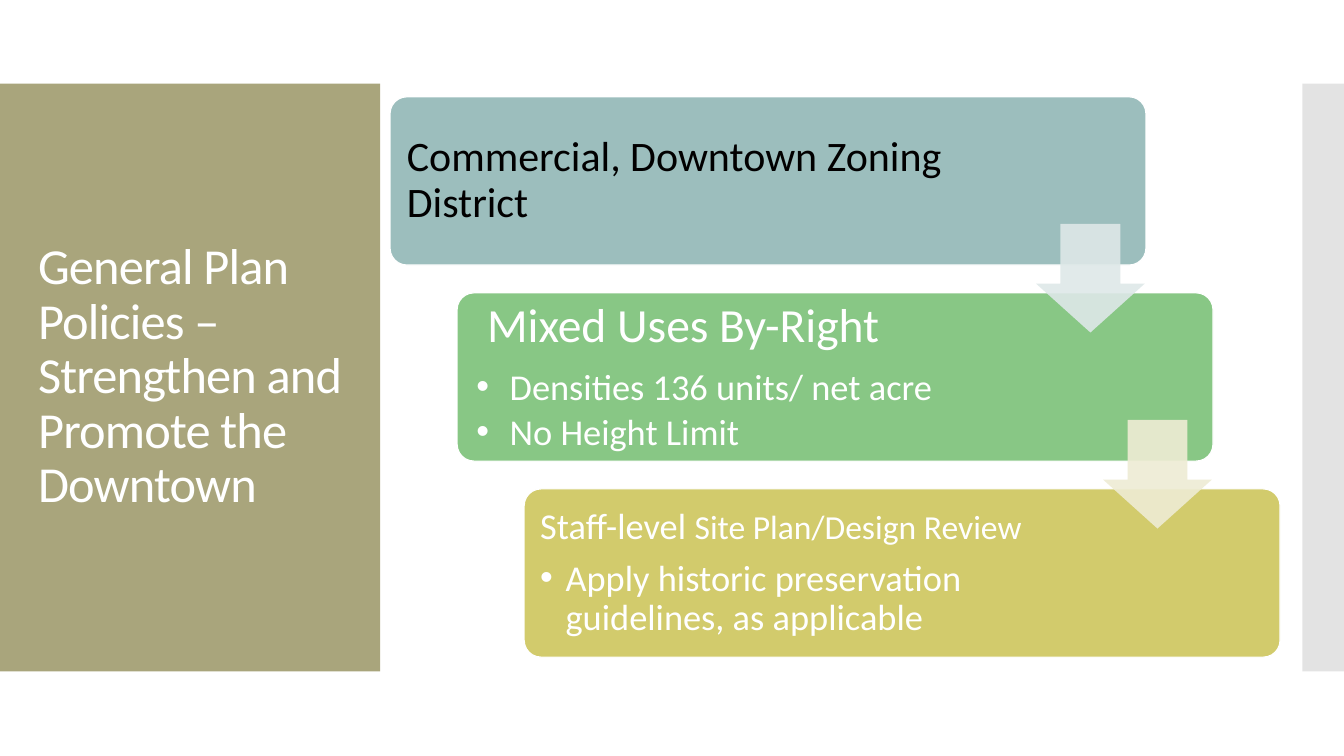
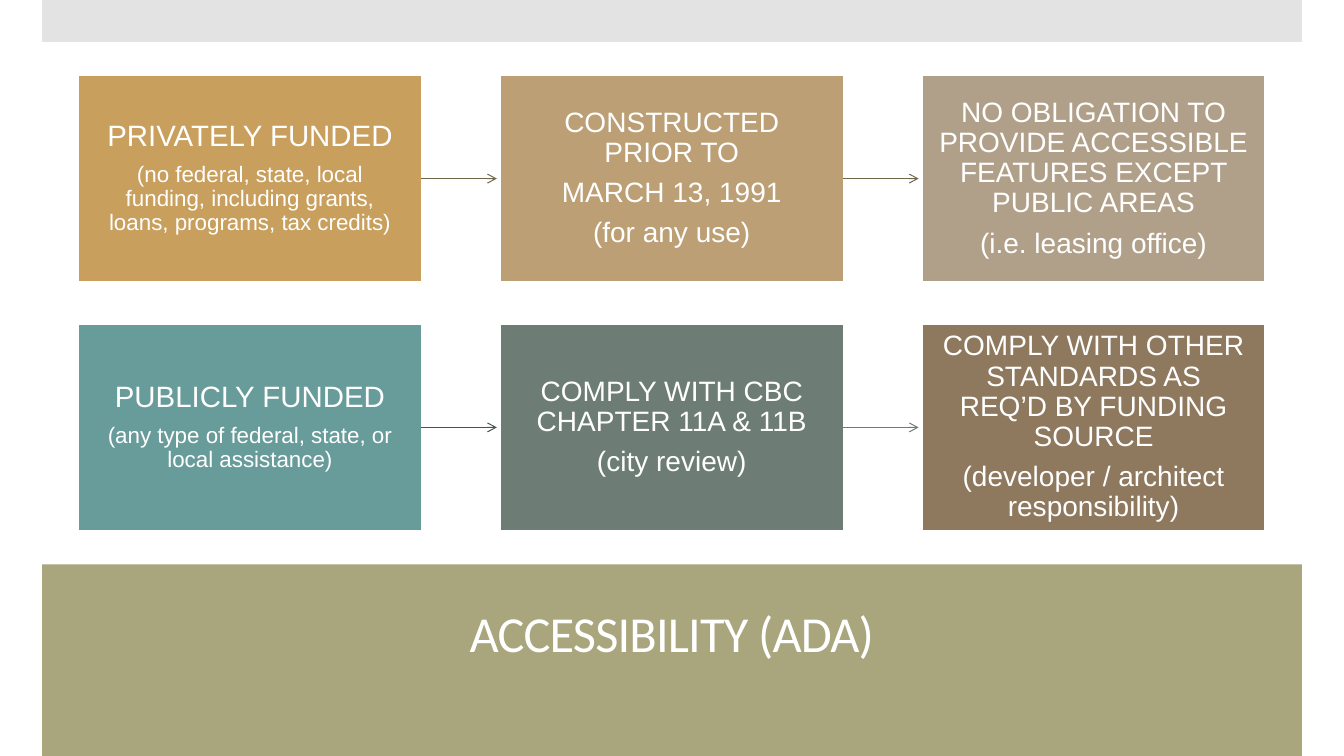
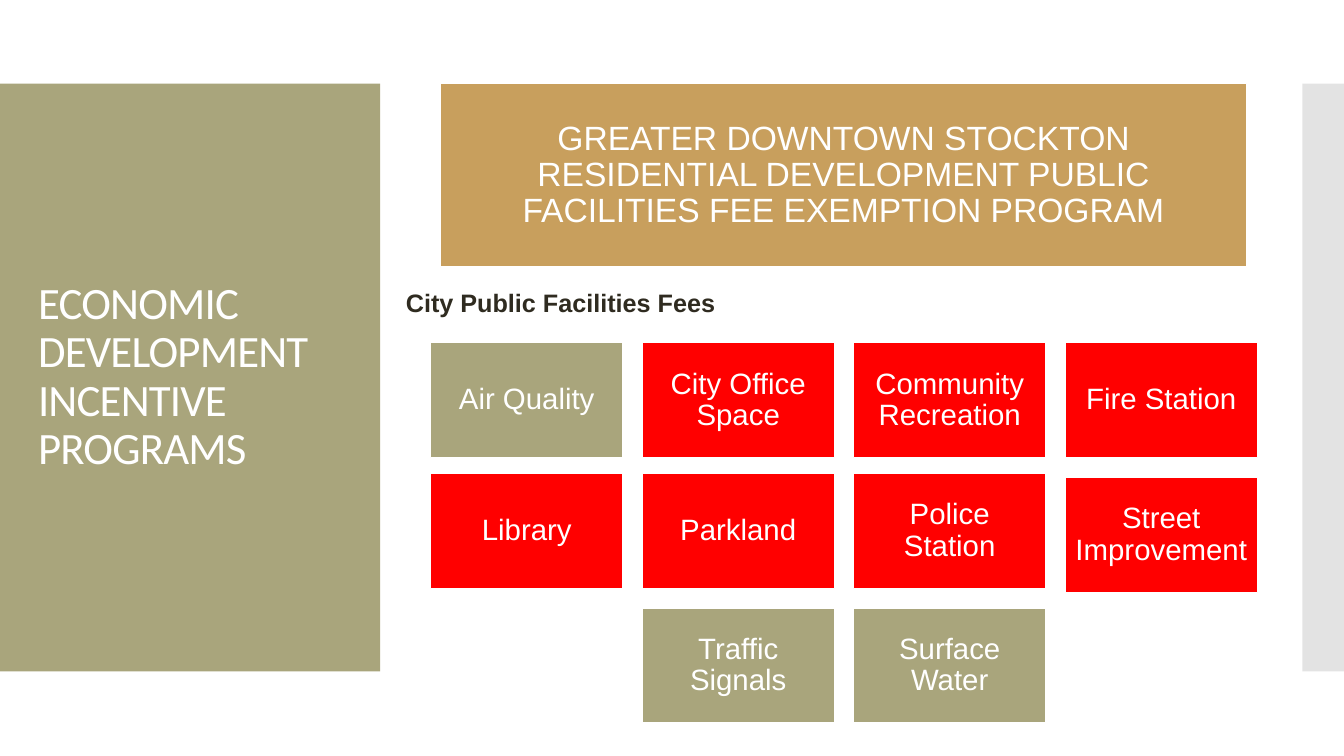
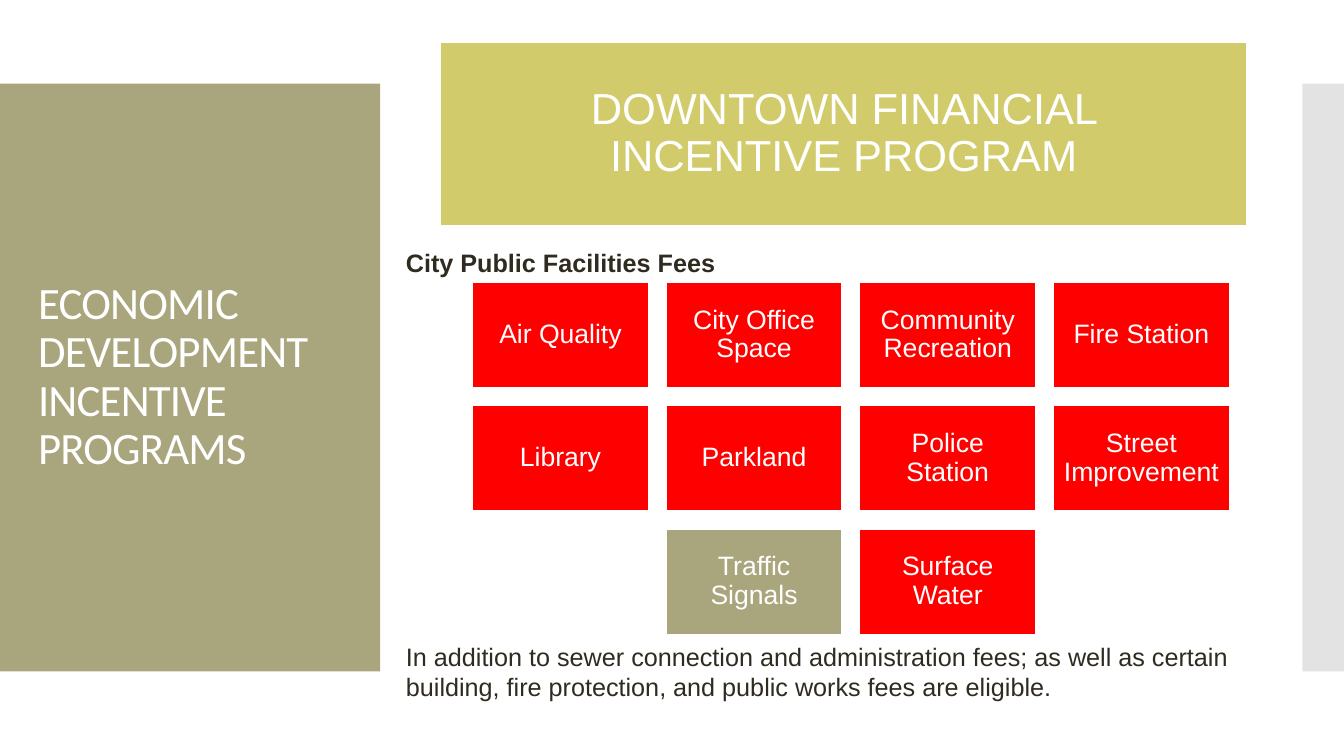
from collections import namedtuple

from lxml import etree
from pptx import Presentation
from pptx.dml.color import RGBColor
from pptx.enum.shapes import MSO_CONNECTOR, MSO_SHAPE
from pptx.enum.text import MSO_ANCHOR, PP_ALIGN
from pptx.oxml.ns import qn
from pptx.util import Cm, Pt

RECT, ROUND, DOWN = MSO_SHAPE.RECTANGLE, MSO_SHAPE.ROUNDED_RECTANGLE, MSO_SHAPE.DOWN_ARROW
STRAIGHT = MSO_CONNECTOR.STRAIGHT
LEFT, CENTER = PP_ALIGN.LEFT, PP_ALIGN.CENTER
TOP, MIDDLE = MSO_ANCHOR.TOP, MSO_ANCHOR.MIDDLE

# Colours
WHITE = RGBColor(0xFF, 0xFF, 0xFF)
BLACK = RGBColor(0x01, 0x00, 0x00)
INK = RGBColor(0x2F, 0x2B, 0x20)
OLIVE = RGBColor(0xA9, 0xA5, 0x7C)
GRAY = RGBColor(0xC8, 0xC8, 0xC8)
GOLD = RGBColor(0xC8, 0x9F, 0x5D)
LIME = RGBColor(0xD2, 0xCB, 0x6C)
RED = RGBColor(0xFF, 0x00, 0x00)
MIST = RGBColor(0x9C, 0xBE, 0xBD)
GREEN = RGBColor(0x88, 0xC7, 0x85)
PALE = RGBColor(0xDE, 0xE8, 0xE8)
CREAM = RGBColor(0xEE, 0xEC, 0xD4)
TAN = RGBColor(0xBC, 0x9F, 0x74)
SAND = RGBColor(0xB1, 0xA0, 0x89)
TEAL = RGBColor(0x68, 0x9C, 0x9A)
SLATE = RGBColor(0x6D, 0x7D, 0x76)
BROWN = RGBColor(0x8E, 0x79, 0x5E)
UMBER = RGBColor(0x6F, 0x66, 0x4C)
PINE = RGBColor(0x48, 0x54, 0x4F)

HEAD, BODY = "Calibri", "Arial"
FEES = (
    ("Air Quality", "City Office Space", "Community Recreation", "Fire Station"),
    ("Library", "Parkland", "Police Station", "Street Improvement"),
    (None, "Traffic Signals", "Surface Water", None),
)

# A paragraph: (text, size) runs, left indent in cm, bullet or not
Para = namedtuple("Para", "runs indent bullet", defaults=(0, False))


def line(text, size, indent=0, bullet=False):
    return Para([(text, size)], indent, bullet)


# Shared parts
def fade(fill, share):
    color = fill._xPr.find(qn("a:solidFill"))[0]
    etree.SubElement(color, qn("a:alpha")).set("val", str(share * 1000))


def block(slide, at, fill, kind=RECT, edge=None, alpha=100):
    shape = slide.shapes.add_shape(kind, *map(Cm, at))
    shape.shadow.inherit = False
    shape.fill.solid()
    shape.fill.fore_color.rgb = fill
    if alpha < 100:
        fade(shape.fill, alpha)
    if edge is None:
        shape.line.fill.background()
    else:
        shape.line.color.rgb = edge
        shape.line.width = Pt(0.85)
    return shape


def write(shape, paras, font=BODY, color=WHITE, align=CENTER, anchor=MIDDLE,
          pad=(0.25, 0.25), bold=False, tight=False, lead=0.9, after=0.35):
    frame = shape.text_frame
    frame.word_wrap = True
    frame.vertical_anchor = anchor
    frame.margin_left, frame.margin_right = map(Cm, pad)
    frame.margin_top = frame.margin_bottom = Cm(0.13 if anchor == TOP else 0)
    for i, item in enumerate(paras):
        para = frame.add_paragraph() if i else frame.paragraphs[0]
        para.alignment = align
        para.line_spacing = lead
        size = item.runs[0][1]
        para.space_after = Pt(size * (0.15 if item.bullet else after))
        props = para._p.get_or_add_pPr()
        if item.indent:
            props.set("marL", str(Cm(item.indent)))
        if item.bullet:
            props.set("indent", str(-Cm(item.indent)))
            etree.SubElement(props, qn("a:buFont")).set("typeface", "Arial")
            etree.SubElement(props, qn("a:buChar")).set("char", "•")
        for text, size in item.runs:
            run = para.add_run()
            run.text = text
            run.font.size = Pt(size)
            run.font.name = font
            run.font.bold = bold
            run.font.color.rgb = color
            if tight:
                run._r.get_or_add_rPr().set("spc", "-60")


def label(slide, at, text, size=18, **style):
    write(slide.shapes.add_textbox(*map(Cm, at)), [line(text, size)], after=0, **style)


def title(slide, at, text, size, align):
    label(slide, at, text, size, font=HEAD, align=align, tight=True)


def side(slide, text, size):
    block(slide, (0, 2.11, 9.58, 14.81), OLIVE)
    block(slide, (32.82, 2.11, 1.05, 14.81), GRAY, alpha=50)
    title(slide, (0.71, 3.12, 8.2, 12.78), text, size, LEFT)


# Staircase of cards joined by down arrows
def stairs(slide, left, top, steps, tints):
    spots = [(left + 1.69 * i, top + 4.94 * i) for i in range(len(steps))]
    for (x, y), (fill, color, inset, paras) in zip(spots, steps):
        card = block(slide, (x, y, 19.05, 4.24), fill, ROUND, WHITE)
        card.adjustments[0] = 0.1
        write(card, paras, HEAD, color, LEFT, pad=(inset, 4.7))
    for (x, y), tint in zip(spots, tints):
        arrow = block(slide, (x + 16.28, y + 3.2, 2.74, 2.74), tint, DOWN, alpha=90)
        arrow.adjustments[0], arrow.adjustments[1] = 0.55, 0.45


# Row of cards joined by thin arrows
def link(slide, x, y, color):
    arrow = slide.shapes.add_connector(STRAIGHT, Cm(x), Cm(y), Cm(x + 1.9), Cm(y))
    arrow.line.color.rgb = color
    arrow.line.width = Pt(0.75)
    etree.SubElement(arrow.line._get_or_add_ln(), qn("a:tailEnd")).set("type", "arrow")
    etree.SubElement(arrow._element.spPr, qn("a:effectLst"))


def chain(slide, left, top, cards, links):
    wide, high, pitch = 8.64, 5.18, 10.63
    for i, (fill, paras) in enumerate(cards):
        card = block(slide, (left + i * pitch, top, wide, high), fill, edge=WHITE)
        write(card, [line(*item) for item in paras], pad=(0.42, 0.42))
    for i, color in enumerate(links):
        link(slide, left + i * pitch + wide, top + high / 2, color)


# Grid of fee tiles; olive tiles are the ones not exempt
def grid(slide, left, tops, pitch, tile, size, pad, plain, drops):
    for y, names in zip(tops, FEES):
        for col, name in enumerate(names):
            if name is None:
                continue
            at = (left + col * pitch, y + drops.get(name, 0), *tile)
            card = block(slide, at, OLIVE if name in plain else RED, edge=WHITE)
            write(card, [line(name, size)], pad=(pad, pad))


def banner(slide, top, fill, text, size):
    card = block(slide, (11.1, top, 20.32, 4.62), fill, edge=WHITE)
    write(card, [line(text, size)], pad=(1.02, 1.02))


def fees(slide, top, fill, text, points, head, **tiles):
    side(slide, "ECONOMIC DEVELOPMENT INCENTIVE PROGRAMS", 32)
    grid(slide, **tiles)
    banner(slide, top, fill, text, points)
    label(slide, (9.98, head, 10, 1.02), "City Public Facilities Fees",
          color=INK, align=LEFT, anchor=TOP, bold=True, lead=1.0)


# Slides
def policy(slide):
    side(slide, "General Plan Policies – Strengthen and Promote the Downtown", 36)
    steps = [
        (MIST, BLACK, 0.3, [line("Commercial, Downtown Zoning District", 30)]),
        (GREEN, WHITE, 0.36, [
            line("Mixed Uses By-Right", 34, 0.27),
            line("Densities 136 units/ net acre", 26, 0.84, True),
            line("No Height Limit", 26, 0.84, True)]),
        (LIME, WHITE, 0.28, [
            Para([("Staff-level ", 26), ("Site Plan/Design Review", 24)]),
            line("Apply historic preservation guidelines, as applicable", 26, 0.64, True)]),
    ]
    stairs(slide, 9.83, 2.44, steps, (PALE, CREAM))


def access(slide):
    block(slide, (1.06, 14.22, 31.75, 4.83), OLIVE)
    block(slide, (1.06, 0, 31.75, 1.06), GRAY, alpha=50)
    title(slide, (1.78, 14.6, 30.3, 2.85), "ACCESSIBILITY (ADA)", 36, CENTER)
    private = [
        (GOLD, [("PRIVATELY FUNDED", 21),
                ("(no federal, state, local funding, including grants, "
                 "loans, programs, tax credits)", 16)]),
        (TAN, [("CONSTRUCTED PRIOR TO", 20), ("MARCH 13, 1991", 20), ("(for any use)", 20)]),
        (SAND, [("NO OBLIGATION TO PROVIDE ACCESSIBLE FEATURES EXCEPT PUBLIC AREAS", 20),
                ("(i.e. leasing office)", 20)]),
    ]
    public = [
        (TEAL, [("PUBLICLY FUNDED", 21),
                ("(any type of federal, state, or local assistance)", 16)]),
        (SLATE, [("COMPLY WITH CBC CHAPTER 11A & 11B", 20), ("(city review)", 20)]),
        (BROWN, [("COMPLY WITH OTHER STANDARDS AS REQ’D BY FUNDING SOURCE", 20),
                 ("(developer / architect responsibility)", 20)]),
    ]
    chain(slide, 1.98, 1.91, private, (UMBER, UMBER))
    chain(slide, 1.98, 8.18, public, (PINE, SLATE))


def exempt(slide):
    fees(slide, 2.11, GOLD,
         "GREATER DOWNTOWN STOCKTON RESIDENTIAL DEVELOPMENT PUBLIC "
         "FACILITIES FEE EXEMPTION PROGRAM", 24, 7.11,
         left=10.85, tops=(8.64, 11.94, 15.32), pitch=5.33, tile=(4.85, 2.9),
         size=21, pad=0.22, plain=("Air Quality", "Traffic Signals", "Surface Water"),
         drops={"Street Improvement": 0.1})


def finance(slide):
    fees(slide, 1.06, LIME, "DOWNTOWN FINANCIAL INCENTIVE PROGRAM", 31, 6.1,
         left=11.91, tops=(7.11, 10.22, 13.33), pitch=4.88, tile=(4.43, 2.66),
         size=19, pad=0.2, plain=("Traffic Signals",), drops={})
    label(slide, (9.98, 16.03, 22.56, 1.8),
          "In addition to sewer connection and administration fees; as well as certain "
          "building, fire protection, and public works fees are eligible.",
          color=INK, align=LEFT, anchor=TOP, lead=1.0)


def main():
    deck = Presentation()
    deck.slide_width, deck.slide_height = Cm(33.87), Cm(19.05)
    blank = deck.slide_layouts[6]
    for build in (policy, access, exempt, finance):
        build(deck.slides.add_slide(blank))
    deck.save("out.pptx")


if __name__ == "__main__":
    main()
